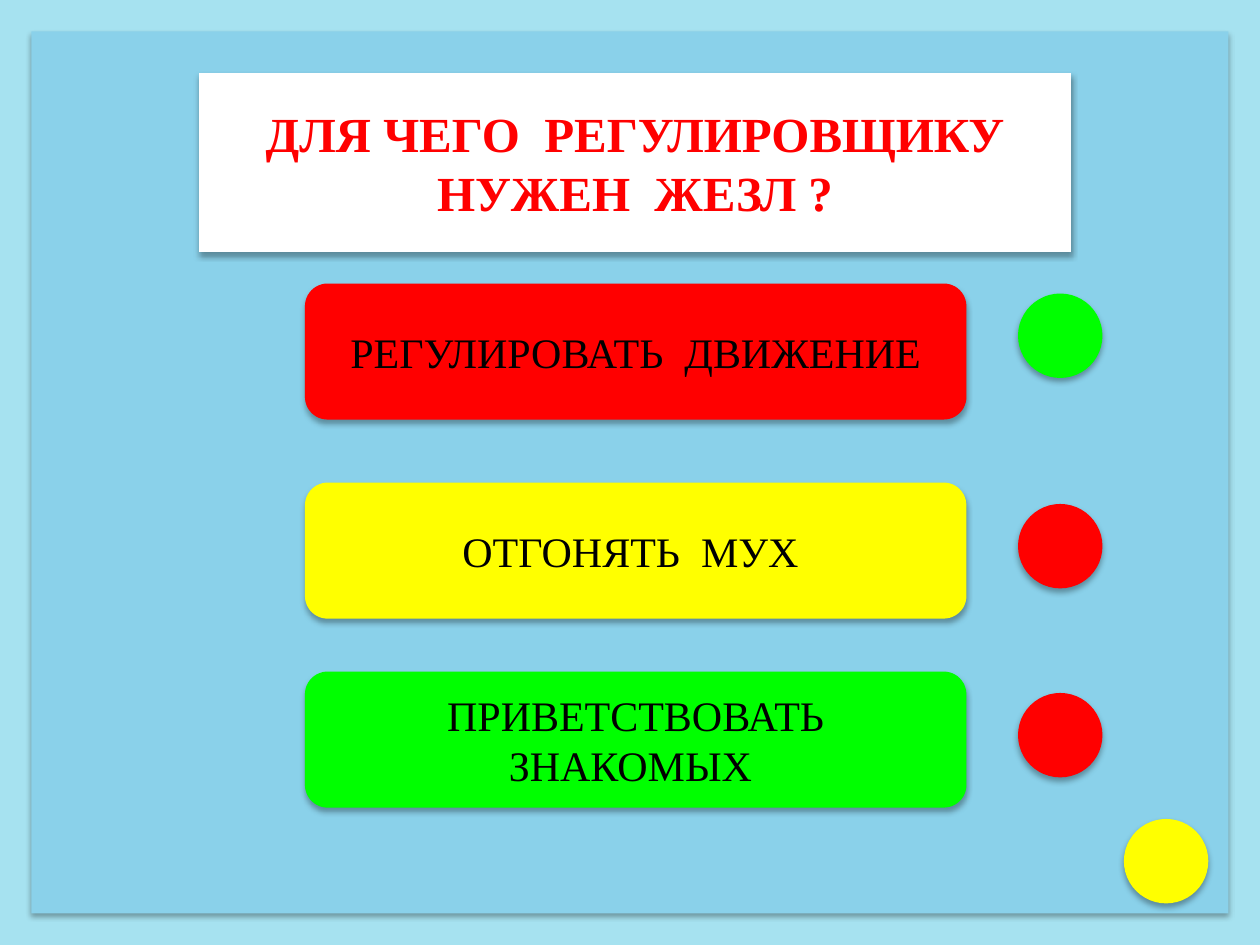
from lxml import etree
from pptx import Presentation
from pptx.dml.color import RGBColor
from pptx.enum import shapes as sh, text as tx
from pptx.oxml.ns import qn
from pptx.util import Inches, Pt

FONT = "Times New Roman"
RED, YELLOW, GREEN = "FF0000", "FFFF00", "00FF00"


def paint(shape, color):
    """Solid fill, no line, soft shadow below."""
    shape.fill.solid()
    shape.fill.fore_color.rgb = RGBColor.from_string(color)
    shape.line.fill.background()
    shape.shadow.inherit = False
    effects = shape.element.spPr.find(qn("a:effectLst"))
    shadow = etree.SubElement(effects, qn("a:outerShdw"), blurRad=str(Pt(3.5)),
                              dist=str(Pt(2.2)), dir="5400000", rotWithShape="0")
    black = etree.SubElement(shadow, qn("a:srgbClr"), val="000000")
    etree.SubElement(black, qn("a:alpha"), val="32000")


def write(shape, words, size, color, bold=False):
    frame = shape.text_frame
    frame.text = words
    frame.word_wrap = True
    frame.vertical_anchor = tx.MSO_ANCHOR.MIDDLE
    line = frame.paragraphs[0]
    line.alignment = tx.PP_ALIGN.CENTER
    font = line.runs[0].font
    font.name, font.size, font.bold = FONT, Pt(size), bold
    font.color.rgb = RGBColor.from_string(color)


prs = Presentation()
prs.slide_width, prs.slide_height = Inches(10), Inches(7.5)
slide = prs.slides.add_slide(prs.slide_layouts[5])
tree = slide.shapes
kinds = sh.MSO_SHAPE

# Background frame and panel
for inset, color in ((0, "A6E2F0"), (0.25, "8AD1EA")):
    panel = tree.add_shape(kinds.RECTANGLE, Inches(inset), Inches(inset),
                           Inches(10 - 2 * inset), Inches(7.5 - 2 * inset))
    paint(panel, color)

# Question, raised above the panels
title = tree.title
panel.element.addnext(title.element)
title.left, title.top = Inches(1.58), Inches(0.58)
title.width, title.height = Inches(6.92), Inches(1.42)
paint(title, "FFFFFF")
write(title, "ДЛЯ ЧЕГО  РЕГУЛИРОВЩИКУ НУЖЕН  ЖЕЗЛ ?", 28, RED, True)

# Answers
answers = (
    ("РЕГУЛИРОВАТЬ  ДВИЖЕНИЕ", 2.25, RED),
    ("ОТГОНЯТЬ  МУХ ", 3.83, YELLOW),
    ("ПРИВЕТСТВОВАТЬ ЗНАКОМЫХ ", 5.33, GREEN),
)
for words, top, color in answers:
    box = tree.add_shape(kinds.ROUNDED_RECTANGLE, Inches(2.42), Inches(top),
                         Inches(5.25), Inches(1.08))
    paint(box, color)
    write(box, words, 24, "000000")

# Signal lights: one per answer, and one in the corner
lights = ((8.08, 2.33, GREEN), (8.08, 4, RED), (8.08, 5.5, RED), (8.92, 6.5, YELLOW))
for left, top, color in lights:
    light = tree.add_shape(kinds.OVAL, Inches(left), Inches(top),
                           Inches(0.67), Inches(0.67))
    paint(light, color)

prs.save("out.pptx")
